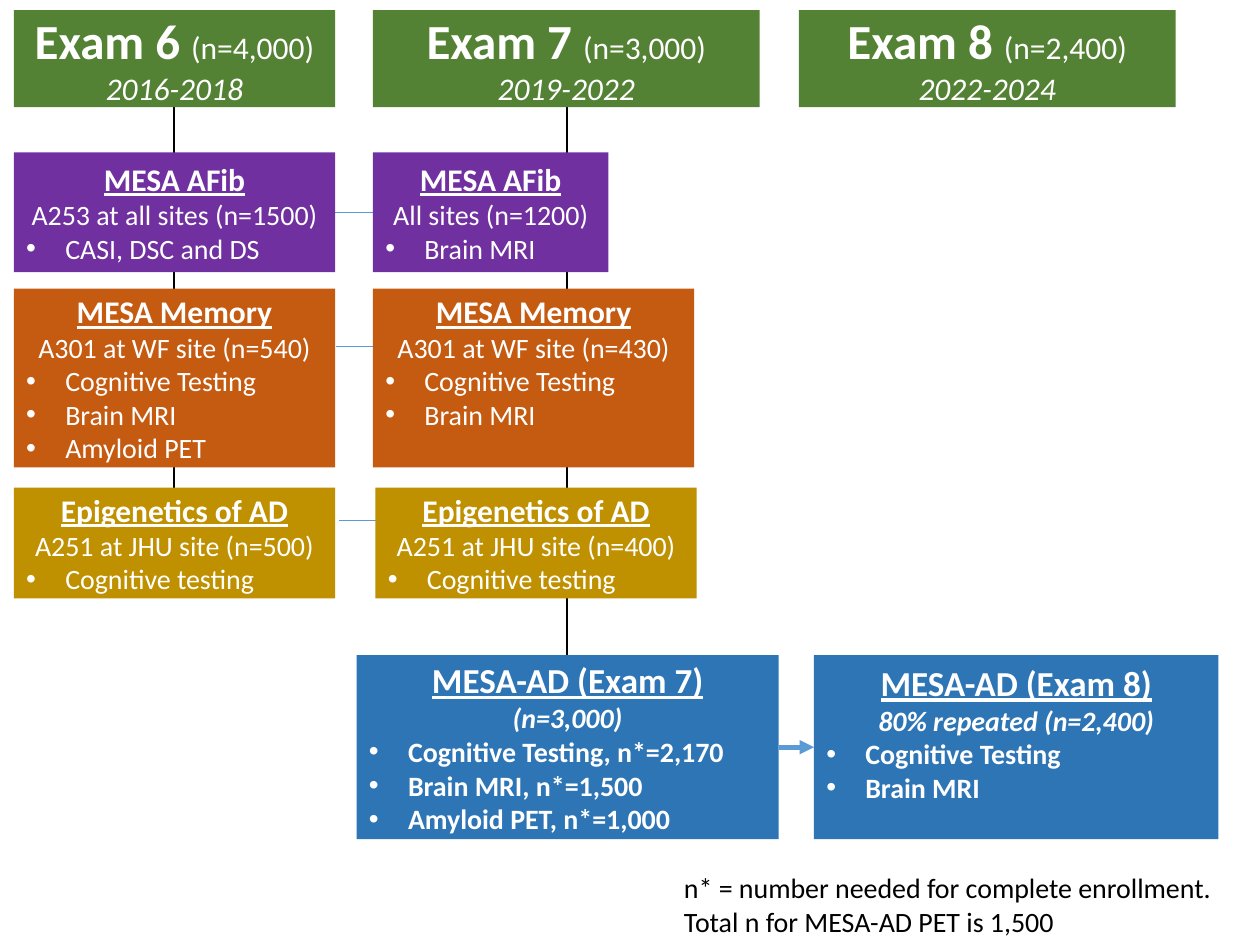
from pptx import Presentation
from pptx.dml.color import RGBColor
from pptx.enum.shapes import MSO_CONNECTOR as Connector, MSO_SHAPE as Shape
from pptx.enum.text import MSO_ANCHOR as Anchor, PP_ALIGN as Align
from pptx.oxml.ns import qn
from pptx.util import Inches, Pt
from lxml.etree import SubElement

GREEN, PURPLE, ORANGE, GOLD, BLUE = "548235", "7030A0", "C55A11", "BF9000", "2E75B6"
WHITE, BLACK, LINK_BLUE = "FFFFFF", "000000", "5B9BD5"

EXAM_6_LEFT, EXAM_7_LEFT = 0.11, 2.96
STUDY_WIDTH = 2.55

# left, width, name, sample size, years
EXAMS = [
    (EXAM_6_LEFT, STUDY_WIDTH, "Exam 6 ", "(n=4,000)", "2016-2018"),
    (EXAM_7_LEFT, 3.07, "Exam 7 ", "(n=3,000)", "2019-2022"),
    (6.34, 2.99, "Exam 8 ", "(n=2,400)", "2022-2024"),
]

# title, colour, top, height, then per exam: left, width, sample, measures
STUDIES = [
    ("MESA AFib", PURPLE, 1.21, 0.95, [
        (EXAM_6_LEFT, STUDY_WIDTH, "A253 at all sites (n=1500)", ["CASI, DSC and DS"]),
        (EXAM_7_LEFT, 1.87, "All sites (n=1200)", ["Brain MRI"]),
    ]),
    ("MESA Memory", ORANGE, 2.29, 1.42, [
        (EXAM_6_LEFT, STUDY_WIDTH, "A301 at WF site (n=540)",
         ["Cognitive Testing", "Brain MRI", "Amyloid PET"]),
        (EXAM_7_LEFT, STUDY_WIDTH, "A301 at WF site (n=430)",
         ["Cognitive Testing", "Brain MRI"]),
    ]),
    ("Epigenetics of AD", GOLD, 3.87, 0.88, [
        (EXAM_6_LEFT, STUDY_WIDTH, "A251 at JHU site (n=500)", ["Cognitive testing"]),
        (2.98, STUDY_WIDTH, "A251 at JHU site (n=400)", ["Cognitive testing"]),
    ]),
]

AD_TOP, AD_HEIGHT = 5.2, 1.46
# left, width, title, sample, measures, anchor
AD_STUDIES = [
    (2.83, 3.35, "MESA-AD (Exam 7)", "(n=3,000)",
     ["Cognitive Testing, n*=2,170", "Brain MRI, n*=1,500", "Amyloid PET, n*=1,000"],
     Anchor.MIDDLE),
    (6.46, 3.21, "MESA-AD (Exam 8)", "80% repeated (n=2,400)",
     ["Cognitive Testing", "Brain MRI"], Anchor.TOP),
]

# start, end, colour, width in points
LINKS = [
    ((4.5, 0.85), (4.5, AD_TOP), BLACK, 1),
    ((1.38, 0.85), (1.38, 3.87), BLACK, 1),
    ((2.66, 1.69), (2.96, 1.69), LINK_BLUE, 0.5),
    ((2.67, 2.75), (2.97, 2.75), LINK_BLUE, 0.5),
    ((2.69, 4.13), (2.99, 4.13), LINK_BLUE, 0.5),
]


def rgb(value):
    return RGBColor.from_string(value)


def add_run(para, text, size, color=WHITE, bold=False, italic=False, underline=False):
    span = para.add_run()
    span.text = text
    font = span.font
    font.name, font.size = "Calibri", Pt(size)
    font.bold, font.italic, font.underline = bold, italic, underline
    font.color.rgb = rgb(color)


def add_para(frame, align=Align.CENTER):
    """Return the empty first paragraph of the frame, or a new one."""
    first = frame.paragraphs[0]
    para = frame.add_paragraph() if first.runs else first
    para.alignment = align
    return para


def add_bullet(para):
    props = para._p.get_or_add_pPr()
    props.set("marL", str(Inches(0.31)))
    props.set("indent", str(Inches(-0.31)))
    SubElement(props, qn("a:buFont")).set("typeface", "Arial")
    SubElement(props, qn("a:buChar")).set("char", "•")


def add_link(slide, start, end, color, width, arrow=False):
    link = slide.shapes.add_connector(
        Connector.STRAIGHT, *(Inches(value) for value in start + end))
    link.line.color.rgb = rgb(color)
    link.line.width = Pt(width)
    if arrow:
        SubElement(link.line._get_or_add_ln(), qn("a:tailEnd")).set("type", "triangle")
    SubElement(link._element.spPr, qn("a:effectLst"))


def add_box(slide, left, top, width, height, color, anchor=Anchor.MIDDLE):
    box = slide.shapes.add_shape(
        Shape.RECTANGLE, *(Inches(value) for value in (left, top, width, height)))
    box.shadow.inherit = False
    box.fill.solid()
    box.fill.fore_color.rgb = rgb(color)
    box.line.fill.background()
    box.text_frame.word_wrap = True
    box.text_frame.vertical_anchor = anchor
    return box.text_frame


def add_exam(slide, left, width, name, sample, years):
    frame = add_box(slide, left, 0.08, width, 0.77, GREEN)
    heading = add_para(frame)
    add_run(heading, name, 28, bold=True)
    add_run(heading, sample, 18)
    add_run(add_para(frame), years, 18, italic=True)


def fill_study(frame, title, sample, measures, title_size=18, bold=False, italic=False):
    add_run(add_para(frame), title, title_size, bold=True, underline=True)
    add_run(add_para(frame), sample, 16, bold=bold, italic=italic)
    for measure in measures:
        para = add_para(frame, Align.LEFT)
        add_bullet(para)
        add_run(para, measure, 16, bold=bold)


def add_study_row(slide, title, color, top, height, visits):
    """Draw one study per exam, with the titles of tall boxes level."""
    tall = height > 1
    for left, width, sample, measures in visits:
        frame = add_box(slide, left, top, width, height, color,
                        Anchor.TOP if tall else Anchor.MIDDLE)
        if tall:
            frame.margin_top = frame.margin_bottom = Inches(0.03)
        fill_study(frame, title, sample, measures)


def add_footnote(slide, *lines):
    box = slide.shapes.add_textbox(Inches(5.33), Inches(6.86), Inches(4.67), Inches(0.64))
    box.text_frame.word_wrap = True
    for line in lines:
        add_run(add_para(box.text_frame, Align.LEFT), line, 16, BLACK)


def main():
    deck = Presentation()
    deck.slide_width, deck.slide_height = Inches(10), Inches(7.5)
    slide = deck.slides.add_slide(deck.slide_layouts[6])

    for link in LINKS:
        add_link(slide, *link)
    add_link(slide, (6.18, 5.93), (6.46, 5.93), LINK_BLUE, 2.75, arrow=True)
    for exam in EXAMS:
        add_exam(slide, *exam)
    for study in STUDIES:
        add_study_row(slide, *study)
    for left, width, title, sample, measures, anchor in AD_STUDIES:
        frame = add_box(slide, left, AD_TOP, width, AD_HEIGHT, BLUE, anchor)
        fill_study(frame, title, sample, measures, title_size=20, bold=True, italic=True)
    add_footnote(slide, "n* = number needed for complete enrollment.",
                 "Total n for MESA-AD PET is 1,500")

    deck.save("out.pptx")


if __name__ == "__main__":
    main()
